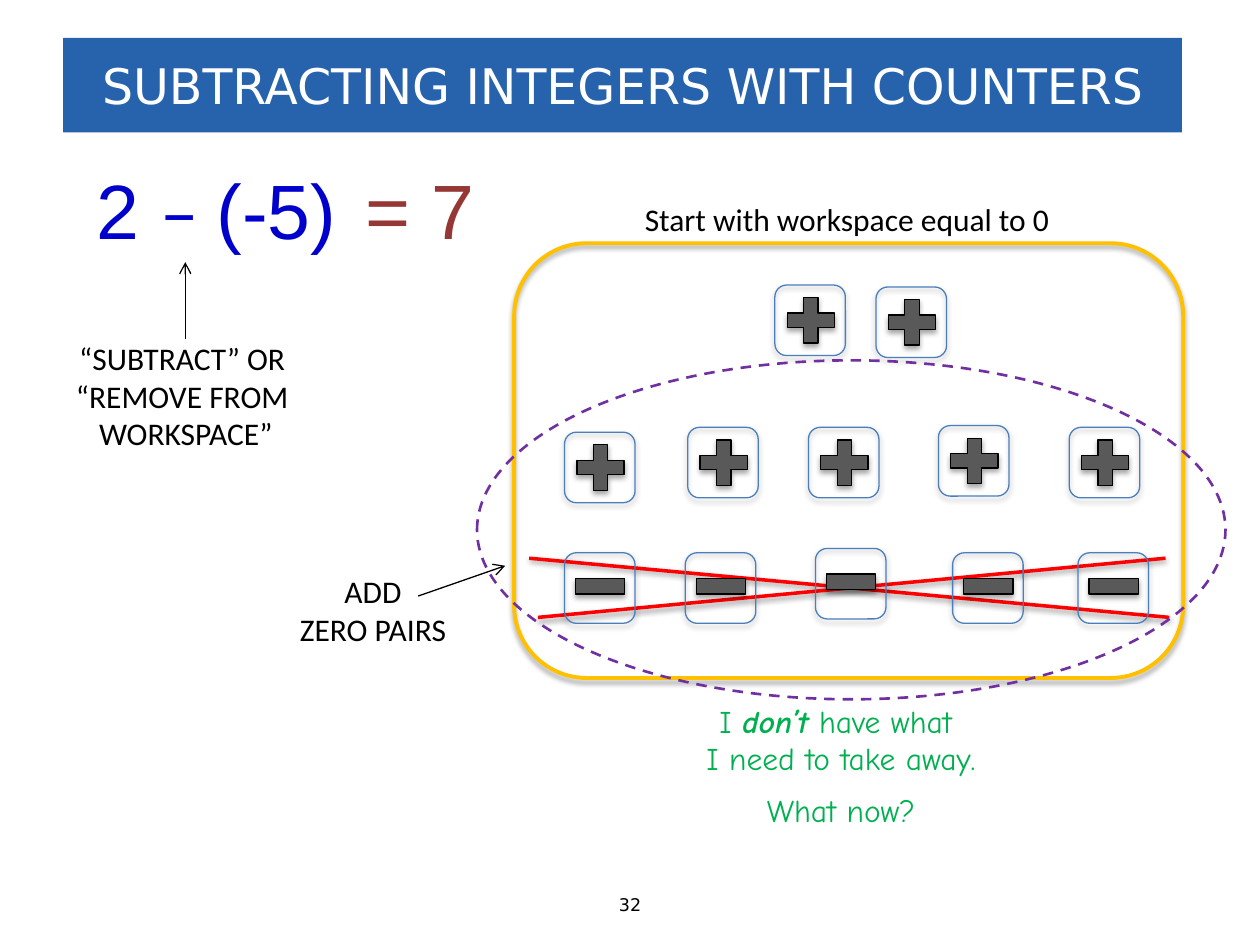
from lxml.etree import SubElement
from pptx import Presentation
from pptx.dml.color import RGBColor
from pptx.enum.dml import MSO_LINE
from pptx.enum.shapes import MSO_CONNECTOR, MSO_SHAPE
from pptx.enum.text import MSO_ANCHOR, PP_ALIGN
from pptx.oxml.ns import qn
from pptx.util import Pt

COLOURS = {
    "black": "000000", "white": "FFFFFF", "banner": "2762AD", "blue": "0000CC",
    "brown": "953735", "green": "00B050", "red": "FF0000", "gold": "FFC000",
    "purple": "7030A0", "mark": "595959", "tile": "4B7EBC",
}
TILE_SIZE = 40.3
# Each mark: preset shape, offset in its tile, size
PLUS = (MSO_SHAPE.MATH_PLUS, 2.2, 2.5, 36.7, 35.3)
MINUS = (MSO_SHAPE.MATH_MINUS, 1.3, 0, 38.2, 38.2)
START_TILES = [(442.8, 162.9), (500.6, 164)]
PAIR_PLUS_TILES = [(322.6, 247), (393, 244.2), (462, 244.2), (536.3, 243.2), (611, 244.2)]
PAIR_MINUS_TILES = [(322.6, 315.9), (391.6, 315.9), (466, 313.4), (544.4, 315.9), (616, 315.9)]


def colour(name):
    return RGBColor.from_string(COLOURS[name])


def write(paragraph, text, *, size=18, font="Calibri", ink="black", bold=False, italic=False):
    span = paragraph.add_run()
    span.text = text
    span.font.size = Pt(size)
    span.font.name = font
    span.font.color.rgb = colour(ink)
    span.font.bold = bold
    span.font.italic = italic


class Slide:
    def __init__(self, page):
        self.page = page

    def effects(self, element, opacity=None, distance=1.8):
        """Give the element an effect list, holding a soft shadow if opacity is set."""
        effects = SubElement(element, qn("a:effectLst"))
        if opacity:
            shadow = SubElement(effects, qn("a:outerShdw"), blurRad=str(Pt(3.1)),
                                dist=str(Pt(distance)), dir="5400000", rotWithShape="0")
            shade = SubElement(shadow, qn("a:srgbClr"), val=COLOURS["black"])
            SubElement(shade, qn("a:alpha"), val=str(opacity * 1000))

    def shape(self, kind, left, top, width, height, *, fill=None, line=None,
              weight=0.75, dash=None, shadow=None):
        shape = self.page.shapes.add_shape(kind, Pt(left), Pt(top), Pt(width), Pt(height))
        if fill:
            shape.fill.solid()
            shape.fill.fore_color.rgb = colour(fill)
        else:
            shape.fill.background()
        if line:
            shape.line.color.rgb = colour(line)
            shape.line.width = Pt(weight)
            if dash:
                shape.line.dash_style = dash
        else:
            shape.line.fill.background()
        self.effects(shape._element.spPr, shadow)
        return shape

    def line(self, start, end, *, ink="black", weight=0.75, arrow=False, shadow=None):
        line = self.page.shapes.add_connector(
            MSO_CONNECTOR.STRAIGHT, *map(Pt, start), *map(Pt, end))
        line.line.color.rgb = colour(ink)
        line.line.width = Pt(weight)
        if arrow:
            SubElement(line.line._get_or_add_ln(), qn("a:tailEnd"), type="arrow")
        self.effects(line._element.spPr, shadow, 1.6)

    def text(self, left, top, width, height, paragraphs, *, align=PP_ALIGN.CENTER, **style):
        """Each paragraph is a string or a list of (string, style) spans."""
        box = self.page.shapes.add_textbox(Pt(left), Pt(top), Pt(width), Pt(height))
        frame = box.text_frame
        frame.word_wrap = True
        for index, content in enumerate(paragraphs):
            paragraph = frame.add_paragraph() if index else frame.paragraphs[0]
            paragraph.alignment = align
            spans = [(content, {})] if isinstance(content, str) else content
            for text, changes in spans:
                write(paragraph, text, **{**style, **changes})
        return frame

    def banner(self, text):
        frame = self.shape(MSO_SHAPE.RECTANGLE, 36, 21.7, 639.4, 54, fill="banner").text_frame
        frame.word_wrap = True
        frame.vertical_anchor = MSO_ANCHOR.MIDDLE
        frame.paragraphs[0].alignment = PP_ALIGN.CENTER
        write(frame.paragraphs[0], text, size=28, font="DejaVu Sans", ink="white")

    def counter(self, left, top, mark):
        kind, right, down, width, height = mark
        self.shape(kind, left + right, top + down, width, height,
                   fill="mark", line="black", shadow=35)
        self.shape(MSO_SHAPE.ROUNDED_RECTANGLE, left, top, TILE_SIZE, TILE_SIZE,
                   line="tile", shadow=35)


def main():
    deck = Presentation()
    deck.slide_width, deck.slide_height = Pt(720), Pt(540)
    slide = Slide(deck.slides.add_slide(deck.slide_layouts[6]))

    slide.text(344.2, 507.6, 31.7, 19.4, ["32"], size=10, font="DejaVu Sans")
    slide.banner("SUBTRACTING INTEGERS WITH COUNTERS")
    slide.text(361.4, 110.9, 254.2, 28.8, ["Start with workspace equal to 0"],
               align=PP_ALIGN.LEFT)

    slide.text(48, 89.3, 163, 60.5,
               [[("2 ", {}), ("– ", {"font": "Calibri"}), ("(-5)", {})]],
               align=PP_ALIGN.LEFT, size=44, font="Arial", ink="blue")
    slide.text(201.6, 89.3, 80.6, 60.5, ["= 7"],
               align=PP_ALIGN.LEFT, size=44, font="Arial", ink="brown")
    slide.line((105.9, 193.7), (105.9, 149.8), arrow=True)
    slide.text(35.3, 190.1, 141.8, 72.7, ["“SUBTRACT” OR ", "“REMOVE FROM ", "WORKSPACE”"])

    for start, end in [((302.4, 319), (668.2, 352.8)), ((307.4, 352.8), (666, 319))]:
        slide.line(start, end, ink="red", weight=2, shadow=38)
    slide.shape(MSO_SHAPE.ROUNDED_RECTANGLE, 293.8, 139, 382.3, 248.4,
                line="gold", weight=2.25, shadow=35)
    for tiles, mark in [(START_TILES, PLUS), (PAIR_PLUS_TILES, PLUS), (PAIR_MINUS_TILES, MINUS)]:
        for left, top in tiles:
            slide.counter(left, top, mark)

    question = slide.text(
        377.3, 397.4, 206.6, 82.1,
        [[("I ", {}), ("don’t", {"bold": True, "italic": True}), (" have what ", {})],
         "I need to take away.", "What now?"],
        font="Comic Neue", ink="green")
    question.paragraphs[-1].space_before = Pt(8)

    slide.text(154.1, 323.3, 118.1, 51.1, ["ADD", "ZERO PAIRS"])
    slide.line((239, 340.6), (288.7, 323.3), arrow=True)
    slide.shape(MSO_SHAPE.OVAL, 272.6, 205.9, 427.7, 193.7,
                line="purple", weight=1.5, dash=MSO_LINE.DASH)
    deck.save("out.pptx")


if __name__ == "__main__":
    main()
